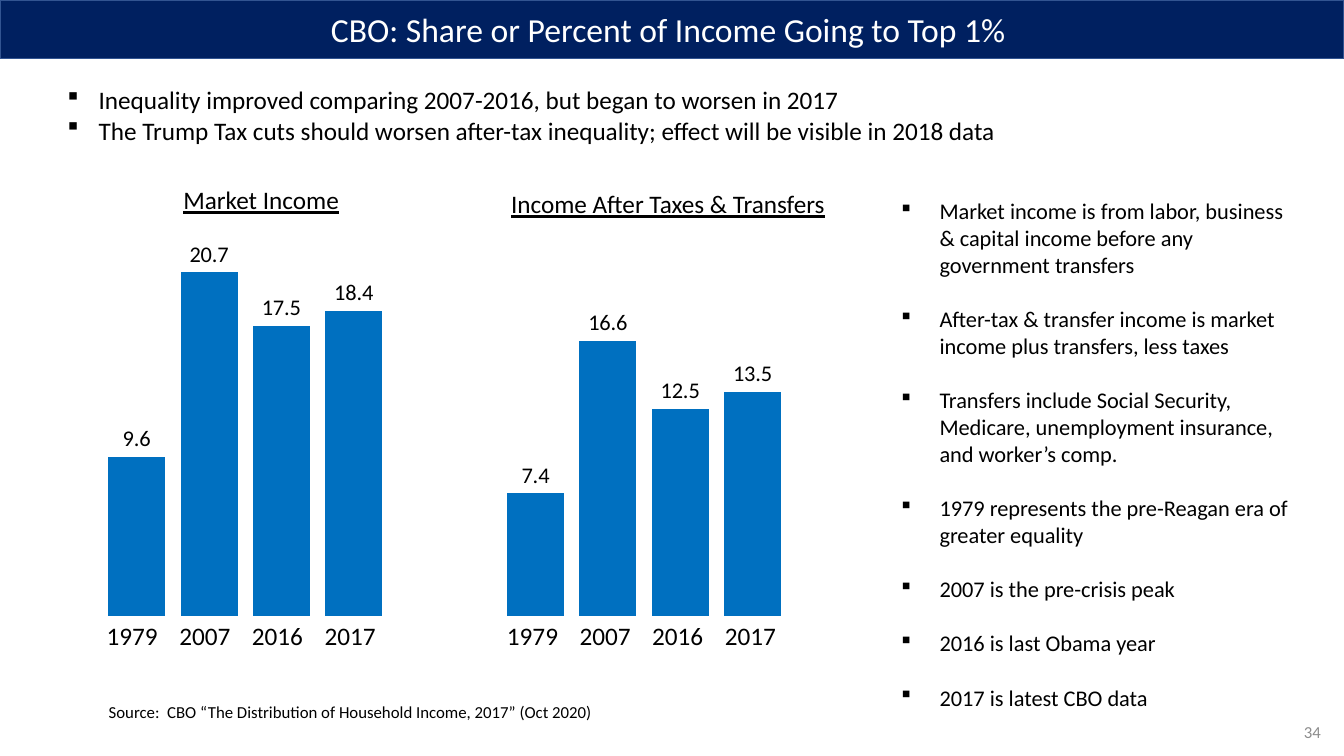
from pptx import Presentation, util as u
from pptx.chart.data import CategoryChartData
from pptx.dml.color import RGBColor
from pptx.enum import chart, text
from pptx.oxml import parse_xml
from pptx.oxml.ns import nsdecls

ALIGN = text.PP_ALIGN


def rgb(hex_code):
    return RGBColor.from_string(hex_code)


class Deck:
    """Style and current slide, with one method per kind of element."""
    font, ink, navy, edge, bar, grey = "Calibri", "000000", "002060", "325491", "0070C0", "8C8C8C"

    def __init__(self, prs):
        self.s = prs.slides.add_slide(prs.slide_layouts[5])

    def style(self, f, size, color=None):
        f.name, f.size = self.font, u.Pt(size)
        f.color.rgb = rgb(color or self.ink)

    def place(self, sp, at):
        sp.left, sp.top, sp.width, sp.height = map(u.Inches, at)

    def run(self, p, words, size, color=None, underline=None):
        r = p.add_run()
        r.text = words
        self.style(r.font, size, color)
        r.font.underline = underline

    def title(self, at, words):
        sp = self.s.shapes.title
        self.place(sp, at)
        sp.fill.solid()
        sp.fill.fore_color.rgb = rgb(self.navy)
        sp.line.color.rgb = rgb(self.edge)
        sp.line.width = u.Pt(1)
        tf = sp.text_frame
        tf.auto_size = text.MSO_AUTO_SIZE.NONE
        tf.vertical_anchor = text.MSO_ANCHOR.MIDDLE
        p = tf.paragraphs[0]
        p.alignment = ALIGN.CENTER
        self.run(p, words, 24, "FFFFFF")

    def box(self, at, wrap):
        tf = self.s.shapes.add_textbox(*map(u.Inches, at)).text_frame
        tf.word_wrap = wrap
        return tf

    def label(self, at, words, size=18, color=None, underline=None, align=ALIGN.LEFT, wrap=False):
        tf = self.box(at, wrap)
        tf.vertical_anchor = text.MSO_ANCHOR.MIDDLE
        p = tf.paragraphs[0]
        p.alignment = align
        self.run(p, words, size, color, underline)

    def bullets(self, at, items, size, indent, gap=0):
        tf = self.box(at, True)
        for i, words in enumerate(items):
            p = tf.add_paragraph() if i else tf.paragraphs[0]
            p.space_before = u.Pt(gap if i else 0)
            pPr = p._p.get_or_add_pPr()
            pPr.set("marL", str(u.Inches(indent)))
            pPr.set("indent", str(-u.Inches(indent)))
            pPr.append(parse_xml(f'<a:buFont {nsdecls("a")} typeface="Wingdings"/>'))
            pPr.append(parse_xml(f'<a:buChar {nsdecls("a")} char="§"/>'))
            self.run(p, words, size)

    def columns(self, at, cats, series):
        data = CategoryChartData(number_format="#0.0")
        data.categories = cats
        for name, values in series:
            data.add_series(name, values)
        kind = chart.XL_CHART_TYPE.COLUMN_CLUSTERED
        c = self.s.shapes.add_chart(kind, *map(u.Inches, at), data).chart
        self.style(c.font, 10)
        c.has_legend = c.has_title = False
        c.category_axis.visible = c.value_axis.visible = False
        c.value_axis.has_major_gridlines = False
        c.value_axis.minimum_scale, c.value_axis.maximum_scale = 0, 25
        plot = c.plots[0]
        plot.gap_width, plot.overlap, plot.vary_by_categories = 219, -27, False
        for ser in plot.series:
            ser.format.fill.solid()
            ser.format.fill.fore_color.rgb = rgb(self.bar)
            labels = ser.data_labels
            labels.show_value = True
            labels.number_format, labels.number_format_is_linked = "#0.0", False
            labels.position = chart.XL_LABEL_POSITION.OUTSIDE_END
            self.style(labels.font, 16)


def main():
    prs = Presentation()
    prs.slide_width, prs.slide_height = u.Inches(13.33), u.Inches(7.5)
    d = Deck(prs)

    # Title bar and key messages
    d.title((0, 0, 13.33, 0.58), "CBO: Share or Percent of Income Going to Top 1% ")
    d.bullets((0.57, 0.79, 10.59, 0.71), [
        "Inequality improved comparing 2007-2016, but began to worsen in 2017",
        "The Trump Tax cuts should worsen after-tax inequality; effect will be visible in 2018 data",
    ], 18, 0.31)

    # Chart: one group per income measure, one bar per year
    d.columns((0.29, 1.91, 8.24, 4.29), ["1", "2"], [
        ("Series 1", (9.6, 7.4)),
        ("Series 2", (20.7, 16.6)),
        ("Series 3", (17.5, 12.5)),
        ("Series 4", (18.4, 13.5)),
    ])

    # Group headings and year labels
    d.label((1.72, 1.78, 1.76, 0.4), "Market Income", underline=True)
    d.label((4.97, 1.82, 3.35, 0.4), "Income After Taxes & Transfers", underline=True)
    for left in (0.96, 4.93):
        for i, year in enumerate(("1979", "2007", "2016", "2017")):
            d.label((left + 0.72 * i, 6.1, 0.71, 0.4), year)

    # Definitions on the right
    d.bullets((8.84, 1.91, 4.16, 5.22), [
        "Market income is from labor, business & capital income before any government transfers",
        "After-tax & transfer income is market income plus transfers, less taxes",
        "Transfers include Social Security, Medicare, unemployment insurance, and worker’s comp.",
        "1979 represents the pre-Reagan era of greater equality",
        "2007 is the pre-crisis peak",
        "2016 is last Obama year",
        "2017 is latest CBO data",
    ], 16, 0.38, gap=19.5)

    # Source and page number
    d.label((0.98, 6.91, 5.06, 0.3),
            "Source:  CBO “The Distribution of Household Income, 2017” (Oct 2020)", 12)
    d.label((10.2, 7.06, 3, 0.4), "34", 12, d.grey, align=ALIGN.RIGHT, wrap=True)

    prs.save("out.pptx")


if __name__ == "__main__":
    main()
